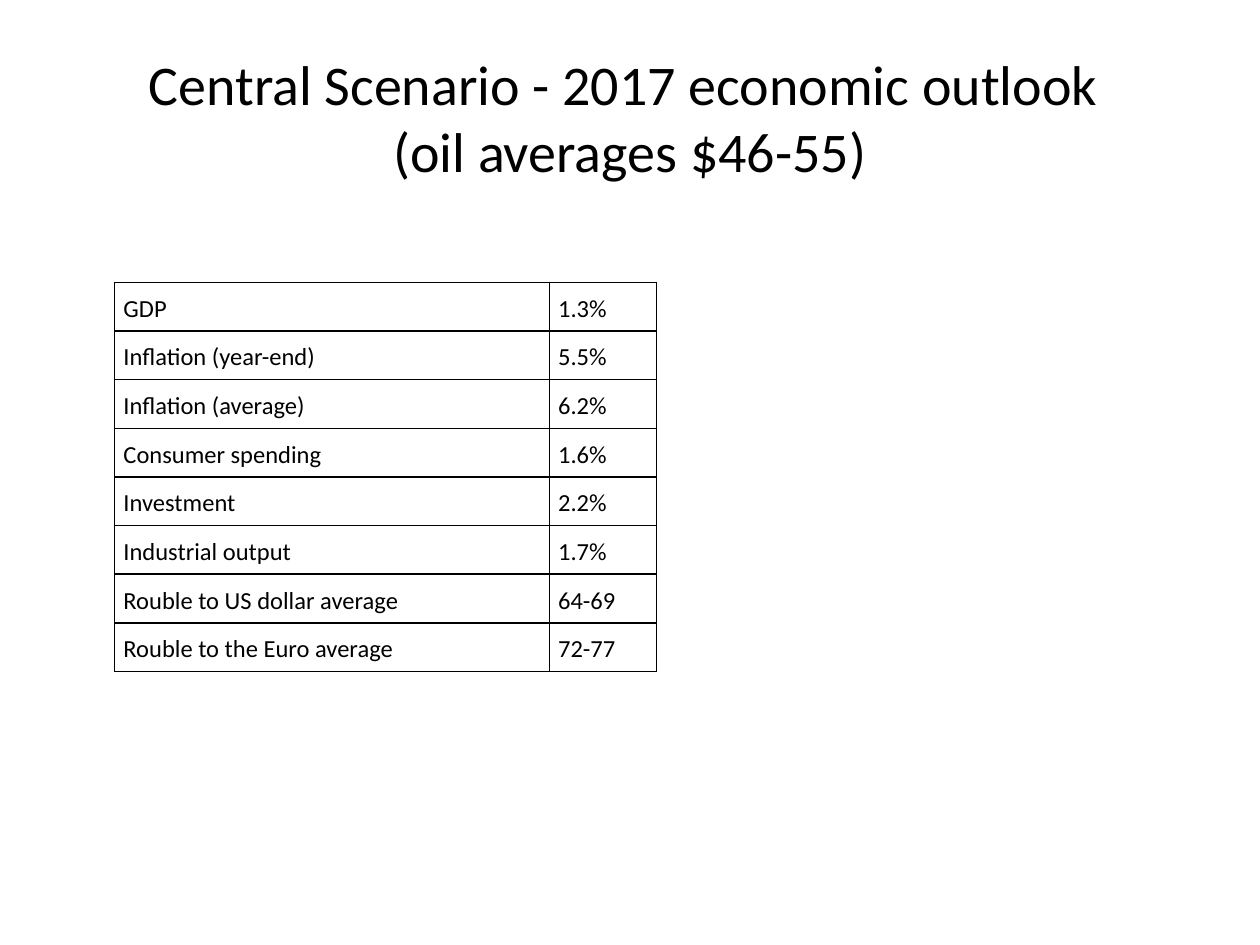
from lxml.etree import SubElement
from pptx import Presentation
from pptx.dml.color import RGBColor
from pptx.enum.text import MSO_ANCHOR, PP_ALIGN
from pptx.oxml.ns import qn
from pptx.util import Inches, Pt

WIDE, HIGH = Inches(10), Inches(7.5)
FONT = "Calibri"
COLORS = {"ink": "000000", "paper": "FFFFFF"}
TITLE = "Central Scenario - 2017 economic outlook \v(oil averages $46-55)"
OUTLOOK = [
    ("GDP", "1.3%"),
    ("Inflation (year-end)", "5.5%"),
    ("Inflation (average)", "6.2%"),
    ("Consumer spending", "1.6%"),
    ("Investment", "2.2%"),
    ("Industrial output", "1.7%"),
    ("Rouble to US dollar average", "64-69"),
    ("Rouble to the Euro average", "72-77"),
]
COLS = [Inches(3.45), Inches(0.85)]
ROW = Inches(3.09 / len(OUTLOOK))


def color(name):
    return RGBColor.from_string(COLORS[name])


def style(para, size):
    for run in para.runs:
        run.font.name = FONT
        run.font.size = Pt(size)
        run.font.color.rgb = color("ink")


def add_title(slide):
    title = slide.shapes.title
    title.left, title.top = int(WIDE * 0.05), int(HIGH * 0.04)
    title.width, title.height = int(WIDE * 0.9), int(HIGH / 6)
    frame = title.text_frame
    frame.text = TITLE
    frame.word_wrap = True
    frame.vertical_anchor = MSO_ANCHOR.MIDDLE
    para = frame.paragraphs[0]
    para.alignment = PP_ALIGN.CENTER
    style(para, 32)


def add_border(cell):
    props = cell._tc.get_or_add_tcPr()
    for side in ("a:lnL", "a:lnR", "a:lnT", "a:lnB"):
        line = SubElement(props, qn(side), w=str(Pt(1)))
        fill = SubElement(line, qn("a:solidFill"))
        SubElement(fill, qn("a:srgbClr"), val=COLORS["ink"])


def fill_cell(cell, text):
    cell.text_frame.text = text
    cell.margin_left = cell.margin_right = Inches(0.07)
    cell.margin_top = cell.margin_bottom = 0
    cell.vertical_anchor = MSO_ANCHOR.MIDDLE
    para = cell.text_frame.paragraphs[0]
    para.line_spacing = 1.15
    style(para, 14)
    add_border(cell)
    cell.fill.background()


def add_outlook(slide):
    table = slide.shapes.add_table(
        len(OUTLOOK), len(COLS), Inches(0.91), Inches(2.24),
        sum(COLS), ROW * len(OUTLOOK)).table
    table.first_row = table.horz_banding = False
    for col, width in zip(table.columns, COLS):
        col.width = width
    for row, texts in zip(table.rows, OUTLOOK):
        row.height = ROW
        for cell, text in zip(row.cells, texts):
            fill_cell(cell, text)


def main():
    deck = Presentation()
    deck.slide_width, deck.slide_height = WIDE, HIGH
    slide = deck.slides.add_slide(deck.slide_layouts[5])
    slide.background.fill.solid()
    slide.background.fill.fore_color.rgb = color("paper")
    add_title(slide)
    add_outlook(slide)
    deck.save("out.pptx")


if __name__ == "__main__":
    main()
